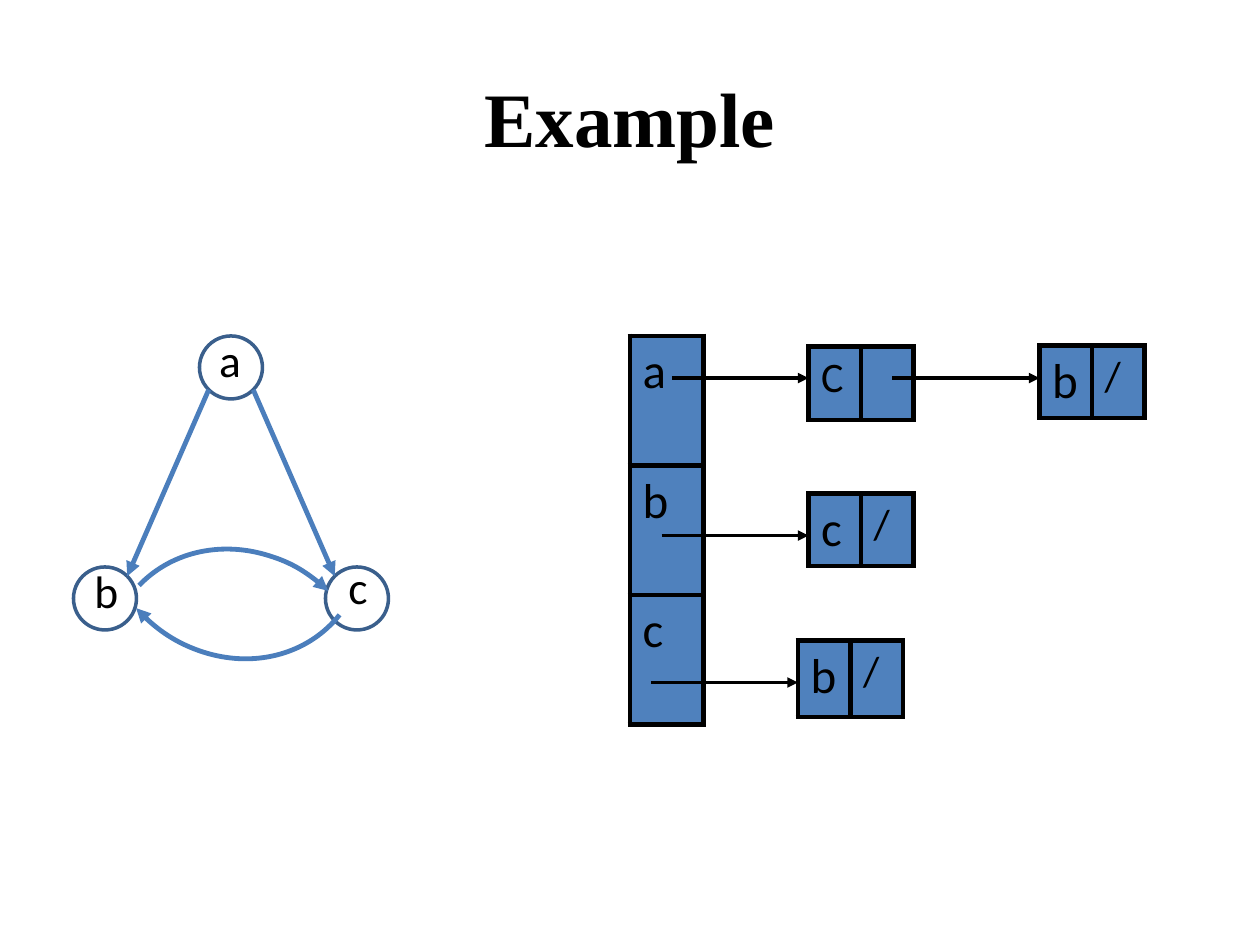
from math import sqrt

from lxml import etree
from pptx import Presentation
from pptx.dml.color import RGBColor
from pptx.enum.shapes import MSO_CONNECTOR, MSO_SHAPE
from pptx.enum.text import MSO_ANCHOR, MSO_AUTO_SIZE, PP_ALIGN
from pptx.oxml.ns import qn
from pptx.util import Inches, Pt

LINE = MSO_CONNECTOR.STRAIGHT
OVAL, ARC = MSO_SHAPE.OVAL, MSO_SHAPE.ARC
MID, FIT = MSO_ANCHOR.MIDDLE, MSO_AUTO_SIZE.SHAPE_TO_FIT_TEXT
CENTER = PP_ALIGN.CENTER

UNIT = 12
COLS, ROWS = 120, 90
HUES = {"ink": "000000", "paper": "FFFFFF", "cell": "4F81BD",
        "ring": "3A5F8C", "edge": "4B7EBC"}
HEAD = {"name": "Times New Roman", "size": Pt(44), "bold": True}
BODY = {"name": "Calibri", "bold": False}


def grid(*nums):
    return [Inches(num / UNIT) for num in nums]


def hue(name):
    return RGBColor.from_string(HUES[name])


def paint(fill, name):
    fill.solid()
    fill.fore_color.rgb = hue(name)


def write(frame, text, look):
    run = frame.paragraphs[0].add_run()
    run.text = text
    for key, value in look.items():
        setattr(run.font, key, value)
    run.font.color.rgb = hue("ink")


def stroke(item, name, width, arrow=True):
    item.line.color.rgb = hue(name)
    item.line.width = Pt(width)
    if arrow:
        etree.SubElement(item.line._get_or_add_ln(), qn("a:tailEnd"), type="triangle")


def link(slide, start, end, name, width):
    line = slide.shapes.add_connector(LINE, *grid(*start, *end))
    stroke(line, name, width)
    etree.SubElement(line._element.spPr, qn("a:effectLst"))


def border(cell):
    props = cell._tc.get_or_add_tcPr()
    for spot, side in enumerate(("lnL", "lnR", "lnT", "lnB")):
        line = etree.Element(qn("a:" + side), w=str(Pt(3)))
        fill = etree.SubElement(line, qn("a:solidFill"))
        etree.SubElement(fill, qn("a:srgbClr"), val=HUES["ink"])
        props.insert(spot, line)


def table(slide, box, rows):
    left, top, width, height = box
    tab = slide.shapes.add_table(len(rows), len(rows[0]), *grid(*box)).table
    tab.first_row = tab.horz_banding = False
    for col in tab.columns:
        col.width = Inches(width / len(rows[0]) / UNIT)
    for row, words in zip(tab.rows, rows):
        row.height = Inches(height / len(rows) / UNIT)
        for cell, text in zip(row.cells, words):
            paint(cell.fill, "cell")
            border(cell)
            if text:
                size = 24 if text in "/C" else 28
                write(cell.text_frame, text, {**BODY, "size": Pt(size)})


def title(slide, box):
    frame = slide.shapes.add_textbox(*grid(*box)).text_frame
    frame.word_wrap = True
    frame.vertical_anchor = MID
    frame.paragraphs[0].alignment = CENTER
    write(frame, "Example", HEAD)


def node(slide, left, top, size):
    ring = slide.shapes.add_shape(OVAL, *grid(left, top, size, size))
    ring.shadow.inherit = False
    paint(ring.fill, "paper")
    stroke(ring, "ring", 2, False)


def curve(slide, left, top, turn, ends):
    arc = slide.shapes.add_shape(ARC, *grid(left, top, 24.1, 26.8))
    arc.shadow.inherit = False
    arc.fill.background()
    arc.rotation = turn
    for spot, value in enumerate(ends):
        arc.adjustments[spot] = value
    stroke(arc, "edge", 2.75)


def label(slide, text, left, top, width):
    frame = slide.shapes.add_textbox(*grid(left, top, width, 6.5)).text_frame
    frame.word_wrap = False
    frame.auto_size = FIT
    write(frame, text, {**BODY, "size": Pt(26)})


def graph(slide, box):
    left, top, width, height = box
    size = 6
    mid, right, low = left + (width - size) / 2, left + width - size, top + height - size
    for x, y in ((mid, top), (left, low), (right, low)):
        node(slide, x, y, size)
    hub, slant = mid + size / 2, size / 2 / sqrt(2)
    reach = (width - size) / 2 - slant
    for side in (-1, 1):
        link(slide, (hub + side * slant, top + size / 2 + slant),
             (hub + side * reach, low + size / 2 - slant), "edge", 2.75)
    curve(slide, left + 3, top + 4.6, 135.3, (158.68, 2.15))
    curve(slide, left + 3.9, top + 19.6, 313.6, (162, 0))
    label(slide, "a", mid + 0.7, top - 1, 4.6)
    label(slide, "b", left + 0.8, low - 1, 4.7)
    label(slide, "c", right + 1, low - 1.3, 4.3)


def lists(slide, box):
    left, top, width, height = box
    table(slide, (left, top, 7, height), [["a"], ["b"], ["c"]])
    cells = ((17, 1, 7, "C", ""), (39, 0.9, 6.9, "b", "/"),
             (17, 15, 6.9, "c", "/"), (16, 29, 7.3, "b", "/"))
    for x, y, tall, key, mark in cells:
        table(slide, (left + x, top + y, 10, tall), [[key, mark]])
    for start, end, y in ((25, 39, 4), (4, 17, 4), (3, 17, 19), (2, 16, 33)):
        link(slide, (left + start, top + y), (left + end, top + y), "ink", 2)


def main():
    deck = Presentation()
    deck.slide_width, deck.slide_height = grid(COLS, ROWS)
    slide = deck.slides.add_slide(deck.slide_layouts[6])
    title(slide, (6, 3.6, 108, 15))
    graph(slide, (7, 32, 30, 28))
    lists(slide, (60, 32, 49, 37))
    deck.save("out.pptx")


if __name__ == "__main__":
    main()
